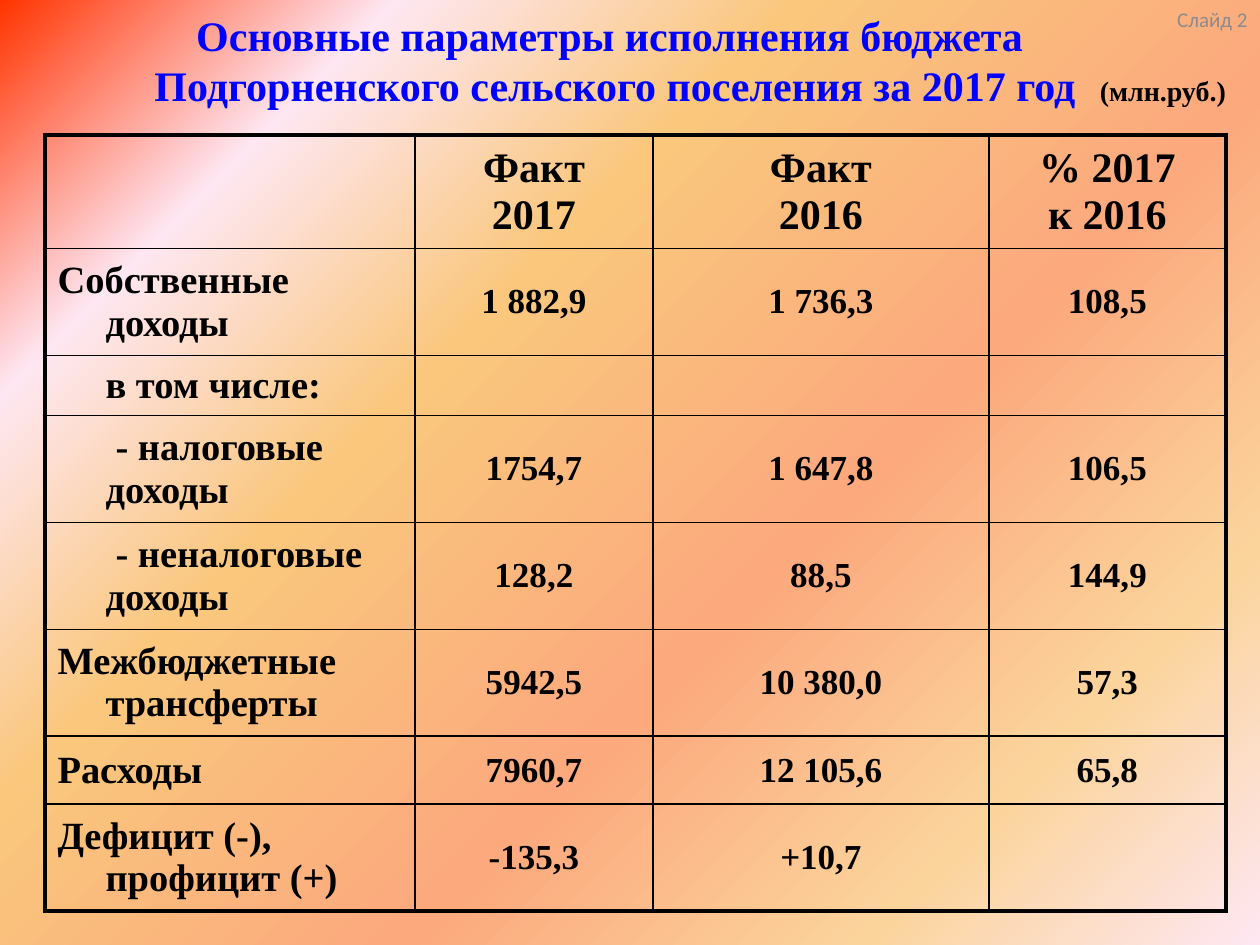
from lxml import etree
from pptx import Presentation
from pptx.dml.color import RGBColor
from pptx.enum.text import MSO_ANCHOR, PP_ALIGN
from pptx.oxml.ns import qn
from pptx.util import Pt

SCALE = 914400 // 126
LEFT, CENTER, RIGHT = PP_ALIGN.LEFT, PP_ALIGN.CENTER, PP_ALIGN.RIGHT
TOP, MIDDLE = MSO_ANCHOR.TOP, MSO_ANCHOR.MIDDLE
BLACK = RGBColor(0, 0, 0)
BLUE = RGBColor(0, 0, 255)
GRAY = RGBColor(0x8C, 0x8C, 0x8C)
STOPS = [
    (0, RGBColor(0xFF, 0x33, 0x00)),
    (18, RGBColor(0xFE, 0xE7, 0xF2)),
    (36, RGBColor(0xFA, 0xC7, 0x7D)),
    (61, RGBColor(0xFB, 0xA9, 0x7D)),
    (82, RGBColor(0xFB, 0xD4, 0x9C)),
    (100, RGBColor(0xFE, 0xE7, 0xF2)),
]
SERIF, SANS = "Times New Roman", "Calibri"
THIN, THICK = 1, 3
HANG, STEP = 48, 10

COLS = [370, 238, 336, 237]
ROWS = [105, 107, 60, 107, 107, 107, 68, 107]
HEADS = [
    [("Факт", 1), ("2017", 2)],
    [("Факт", 1), ("2016", 2)],
    [("% 2017", 1), ("к 2016", 3)],
]
DATA = [
    ("Собственные доходы", -HANG, "1 882,9", "1 736,3", "108,5"),
    ("в том числе:", 0, "", "", ""),
    ("- налоговые доходы", STEP, "1754,7", "1 647,8", "106,5"),
    ("- неналоговые доходы", STEP, "128,2", "88,5", "144,9"),
    ("Межбюджетные трансферты", -HANG, "5942,5", "10 380,0", "57,3"),
    ("Расходы", -HANG, "7960,7", "12 105,6", "65,8"),
    ("Дефицит (-), профицит (+)", -HANG, "-135,3", "+10,7", ""),
]


def px(size):
    """Turn pixels into EMU."""
    return size * SCALE


class Deck:
    """Holds the style and the current slide."""

    def __init__(self):
        self.file = Presentation()
        self.file.slide_width, self.file.slide_height = px(1260), px(945)
        self.slide = self.file.slides.add_slide(self.file.slide_layouts[6])

    def back(self, stops, angle):
        """Fill the background with a gradient."""
        fill = self.slide.background.fill
        fill.gradient()
        grad = self.slide.element.find(".//" + qn("a:gradFill"))
        items = grad.find(qn("a:gsLst"))
        for old in list(items):
            items.remove(old)
        for place, color in stops:
            stop = etree.SubElement(items, qn("a:gs"), pos=str(place * 1000))
            etree.SubElement(stop, qn("a:srgbClr"), val=str(color))
        line = grad.find(qn("a:lin"))
        line.set("ang", str(angle * 60000))
        line.set("scaled", "0")

    def style(self, para, size, align, color=BLACK, font=SERIF, bold=True):
        """Set the font and alignment of a paragraph."""
        para.alignment = align
        para.font.size = Pt(size)
        para.font.name = font
        para.font.bold = bold
        para.font.color.rgb = color

    def text(self, words, x, y, w, h, size, align, anchor=MIDDLE, **look):
        """Add a text box."""
        frame = self.slide.shapes.add_textbox(px(x), px(y), px(w), px(h)).text_frame
        frame.word_wrap = True
        frame.vertical_anchor = anchor
        para = frame.paragraphs[0]
        para.text = words
        self.style(para, size, align, **look)

    def indent(self, para, left, first):
        """Set the left margin and first line of a paragraph."""
        props = para._p.get_or_add_pPr()
        props.set("marL", str(px(left)))
        props.set("indent", str(px(first)))

    def edge(self, cell, sides):
        """Draw the four borders of a cell."""
        props = cell._tc.get_or_add_tcPr()
        for spot, (side, width) in enumerate(sides.items()):
            line = etree.Element(qn("a:ln" + side), w=str(Pt(width)))
            fill = etree.SubElement(line, qn("a:solidFill"))
            etree.SubElement(fill, qn("a:srgbClr"), val=str(BLACK))
            props.insert(spot, line)

    def table(self, x, y, cols, rows):
        """Add a clear table with a thick frame."""
        grid = self.slide.shapes.add_table(
            len(rows), len(cols), px(x), px(y), px(sum(cols)), px(sum(rows))
        ).table
        grid.first_row = grid.horz_banding = False
        for col, width in zip(grid.columns, cols):
            col.width = px(width)
        for row, height in zip(grid.rows, rows):
            row.height = px(height)
        for r in range(len(rows)):
            for c in range(len(cols)):
                cell = grid.cell(r, c)
                cell.fill.background()
                cell.vertical_anchor = MIDDLE
                outer = {
                    "L": c == 0,
                    "R": c == len(cols) - 1,
                    "T": r == 0,
                    "B": r == len(rows) - 1,
                }
                self.edge(cell, {k: THICK if v else THIN for k, v in outer.items()})
        return grid

    def head(self, cell, lines):
        """Write a header cell, each line shifted left by its steps."""
        cell.text = "\n".join(words for words, _ in lines)
        for para, (_, steps) in zip(cell.text_frame.paragraphs, lines):
            self.style(para, 24, CENTER)
            self.indent(para, 0, -steps * STEP)

    def entry(self, cell, words, size, align):
        """Write a body cell and return its paragraph."""
        para = cell.text_frame.paragraphs[0]
        para.text = words
        self.style(para, size, align)
        return para


def main():
    """Build the budget slide."""
    deck = Deck()
    deck.back(STOPS, 45)
    deck.text(
        "Основные параметры исполнения бюджета \v"
        "Подгорненского сельского поселения за 2017 год",
        0, 0, 1230, 119, 24, CENTER, color=BLUE,
    )
    deck.text("Слайд 2", 1155, 0, 105, 65, 12, RIGHT, TOP,
              color=GRAY, font=SANS, bold=False)
    grid = deck.table(45, 135, COLS, ROWS)
    for c, lines in enumerate(HEADS, 1):
        deck.head(grid.cell(0, c), lines)
    for r, (name, first, *values) in enumerate(DATA, 1):
        deck.indent(deck.entry(grid.cell(r, 0), name, 22, LEFT), HANG, first)
        for c, value in enumerate(values, 1):
            if value:
                deck.entry(grid.cell(r, c), value, 20, CENTER)
    deck.text("(млн.руб.)", 1086, 66, 154, 49, 16, CENTER)
    deck.file.save("out.pptx")


if __name__ == "__main__":
    main()
